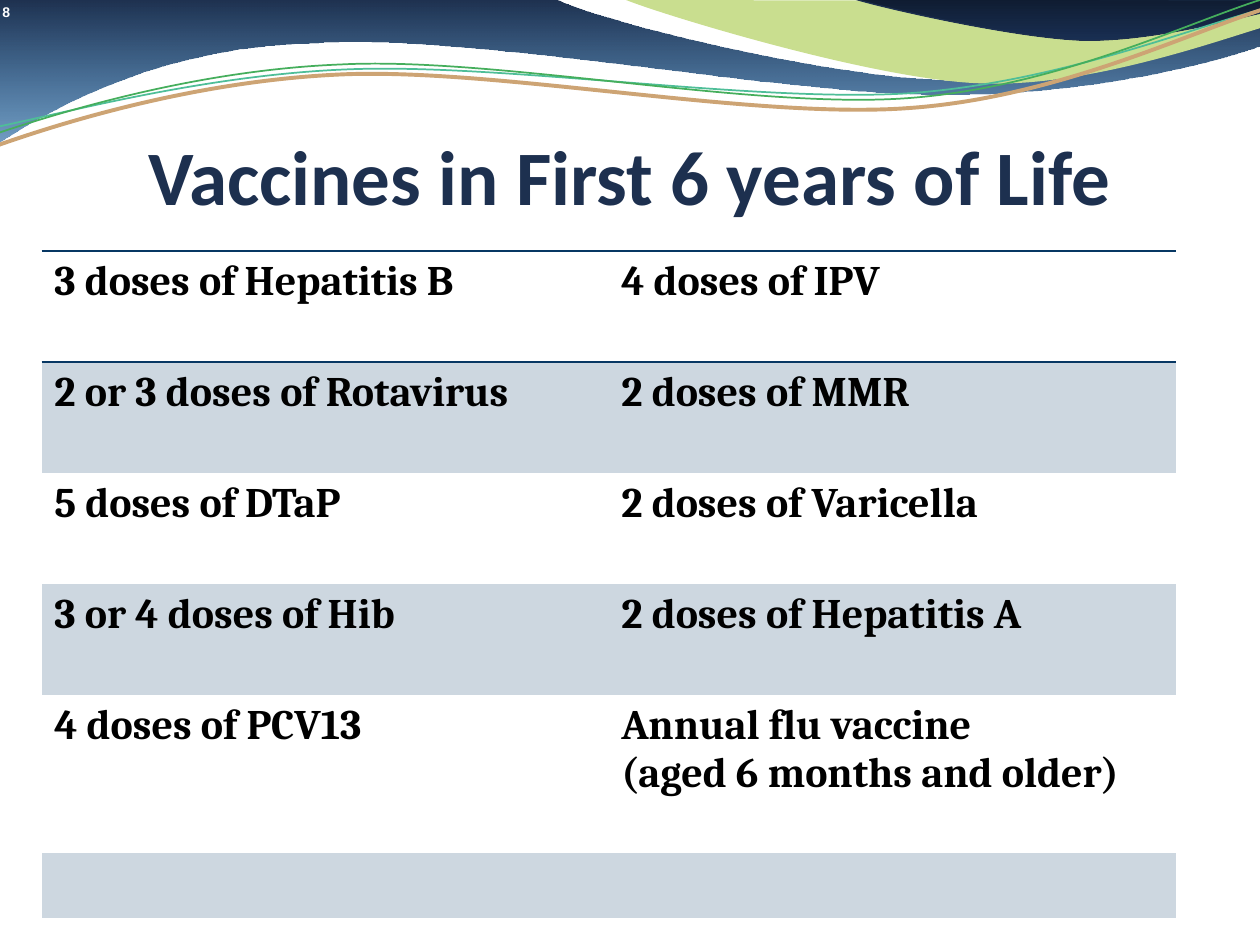
from lxml.etree import SubElement
from pptx import Presentation
from pptx.dml.color import RGBColor
from pptx.enum.text import MSO_ANCHOR, PP_ALIGN
from pptx.oxml.ns import qn
from pptx.util import Cm, Pt

NAVY = RGBColor(0x1D, 0x30, 0x4F)
BLUE = RGBColor(0x00, 0x4C, 0x90)
DARK = RGBColor(0x0F, 0x1C, 0x31)
INK = RGBColor(0x19, 0x2F, 0x53)
LIME = RGBColor(0xC9, 0xDE, 0x8F)
TEAL = RGBColor(0x4E, 0xBE, 0x98)
TAN = RGBColor(0xCD, 0xA4, 0x74)
GREEN = RGBColor(0x45, 0xAE, 0x5C)
RULE = RGBColor(0x07, 0x37, 0x63)
BAND = RGBColor(0xCD, 0xD7, 0xE0)
WHITE = RGBColor(0xFF, 0xFF, 0xFF)
BLACK = RGBColor(0, 0, 0)
NO_STYLE = "{2D5ABB26-0587-4C30-8999-92F81FD0307C}"

# Outlines in cm: a start point, then line ends (x, y)
# or Bezier parts (x1, y1, x2, y2, x, y).
WAVE = [(0, 0), (11.18, -0.03),
        (12.09, 0.43, 16.87, 1.6, 19.25, 1.6),
        (21.67, 1.6, 24.33, 0.66, 25.4, 0.23), (25.43, 0.91),
        (24.97, 1.12, 22.1, 1.93, 18.95, 1.91),
        (15.8, 1.91, 9.7, 0.71, 6.53, 0.86),
        (3.28, 0.91, 1.17, 2.11, -0.03, 2.87)]
LEAF = [(12.62, 0), (13.36, 0.3, 17.6, 1.6, 19.74, 1.68),
        (21.87, 1.78, 24.49, 0.84, 25.43, 0.56), (25.43, 0.03)]
CAP = [(17.2, -0.03), (17.68, 0.13, 20.42, 0.76, 21.82, 0.81),
       (23.19, 0.84, 24.87, 0.38, 25.48, 0.25), (25.48, 0)]
STRANDS = [
    (TEAL, 1, [(-0.38, 2.62), (0.84, 2.41, 3.89, 1.52, 7.01, 1.4),
               (10.13, 1.27, 15.24, 2.08, 18.34, 1.88),
               (21.46, 1.65, 24.21, 0.48, 25.76, 0.1)]),
    (TAN, 2.25, [(-0.3, 3.02), (0.94, 2.57, 3.81, 1.63, 6.91, 1.5),
                 (10.03, 1.37, 15.16, 2.41, 18.31, 2.18),
                 (21.46, 1.96, 24.21, 0.53, 25.76, 0.1)]),
    (GREEN, 1, [(-0.36, 2.79), (0.91, 2.36, 3.78, 1.42, 6.88, 1.3),
                (9.98, 1.14, 15.14, 2.21, 18.29, 1.98),
                (21.44, 1.75, 24.18, 0.33, 25.73, -0.1)]),
]
DOSES = [
    ("3 doses of Hepatitis B", "4 doses of IPV"),
    ("2 or 3 doses of Rotavirus", "2 doses of MMR"),
    ("5 doses of DTaP", "2 doses of Varicella"),
    ("3 or 4 doses of Hib", "2 doses of Hepatitis A"),
    ("4 doses of PCV13", "Annual flu vaccine\n(aged 6 months and older)"),
    ("", ""),
    ("", ""),
]
HEIGHTS = [2.24] * 4 + [3.17, 1.31, 1.31]


def bend(shape, parts):
    """Join each three line steps of a Bezier part into one curve."""
    steps = list(shape._element.iter(qn("a:lnTo")))
    for part in parts[1:]:
        first, steps = steps[0], steps[1:]
        if len(part) == 6:
            first.tag = qn("a:cubicBezTo")
            for step in steps[:2]:
                first.append(step[0])
                step.getparent().remove(step)
            steps = steps[2:]


def add_curve(slide, parts, closed=True):
    dots = [(Cm(part[i]), Cm(part[i + 1]))
            for part in parts for i in range(0, len(part), 2)]
    pen = slide.shapes.build_freeform(*dots[0])
    pen.add_line_segments(dots[1:], close=closed)
    shape = pen.convert_to_shape()
    bend(shape, parts)
    shape.shadow.inherit = False
    shape.line.fill.background()
    if not closed:
        shape.fill.background()
    return shape


def fade(shape, top, base, alpha=100):
    """Fill from top to base; alpha is the opacity of the base in percent."""
    shape.fill.gradient()
    shape.fill.gradient_angle = 270
    for stop, tint in zip(shape.fill.gradient_stops, (top, base)):
        stop.color.rgb = tint
    if alpha < 100:
        last = list(shape._element.spPr.iter(qn("a:srgbClr")))[-1]
        SubElement(last, qn("a:alpha"), val=str(alpha * 1000))


def draw_line(shape, tint, width):
    shape.line.color.rgb = tint
    shape.line.width = Pt(width)


def add_run(para, text, font, size, tint):
    run = para.add_run()
    run.text = text
    run.font.name = font
    run.font.size = Pt(size)
    run.font.bold = True
    run.font.color.rgb = tint


def set_frame(frame, top=0):
    frame.word_wrap = True
    frame.margin_left = frame.margin_right = frame.margin_bottom = 0
    frame.margin_top = Cm(top)


def add_header(slide):
    fade(add_curve(slide, WAVE), NAVY, BLUE, 55)
    leaf = add_curve(slide, LEAF)
    leaf.fill.solid()
    leaf.fill.fore_color.rgb = LIME
    cap = add_curve(slide, CAP)
    fade(cap, DARK, INK)
    draw_line(cap, NAVY, 0.75)
    for tint, width, parts in STRANDS:
        draw_line(add_curve(slide, parts, closed=False), tint, width)


def add_number(slide):
    box = slide.shapes.add_textbox(Cm(0.05), Cm(0.08), Cm(25.48), Cm(0.64))
    set_frame(box.text_frame)
    add_run(box.text_frame.paragraphs[0], "8", "Arial", 8, WHITE)


def set_title(slide):
    title = slide.shapes.title
    title.left, title.top = Cm(1.27), Cm(2.11)
    title.width, title.height = Cm(22.86), Cm(2.34)
    frame = title.text_frame
    set_frame(frame, 0.13)
    frame.vertical_anchor = MSO_ANCHOR.BOTTOM
    para = frame.paragraphs[0]
    para.alignment = PP_ALIGN.CENTER
    add_run(para, "Vaccines in First 6 years of Life", "Calibri", 44, NAVY)


def add_border(cell, side):
    props = cell._tc.get_or_add_tcPr()
    line = SubElement(props, qn(f"a:{side}"), w=str(Pt(1)))
    fill = SubElement(line, qn("a:solidFill"))
    SubElement(fill, qn("a:srgbClr"), val=str(RULE))


def fill_cell(cell, text, row):
    if row == 0:
        add_border(cell, "lnT")
    if row in (0, len(DOSES) - 1):
        add_border(cell, "lnB")
    if row % 2:
        cell.fill.solid()
        cell.fill.fore_color.rgb = BAND
    else:
        cell.fill.background()
    para = cell.text_frame.paragraphs[0]
    for place, part in enumerate(text.split("\n") if text else []):
        if place:
            para.add_line_break()
        add_run(para, part, "Cambria", 24, BLACK)


def add_doses(slide):
    frame = slide.shapes.add_table(len(DOSES), 2, Cm(0.84), Cm(5.06),
                                   Cm(22.86), Cm(sum(HEIGHTS)))
    table = frame.table
    table.first_row = table.horz_banding = False
    table._tbl.tblPr.find(qn("a:tableStyleId")).text = NO_STYLE
    for row, texts in enumerate(DOSES):
        table.rows[row].height = Cm(HEIGHTS[row])
        for col, text in enumerate(texts):
            fill_cell(table.cell(row, col), text, row)


def main():
    deck = Presentation()
    deck.slide_width, deck.slide_height = Cm(25.4), Cm(19.05)
    slide = deck.slides.add_slide(deck.slide_layouts[5])
    add_header(slide)
    add_number(slide)
    set_title(slide)
    add_doses(slide)
    deck.save("out.pptx")


if __name__ == "__main__":
    main()
